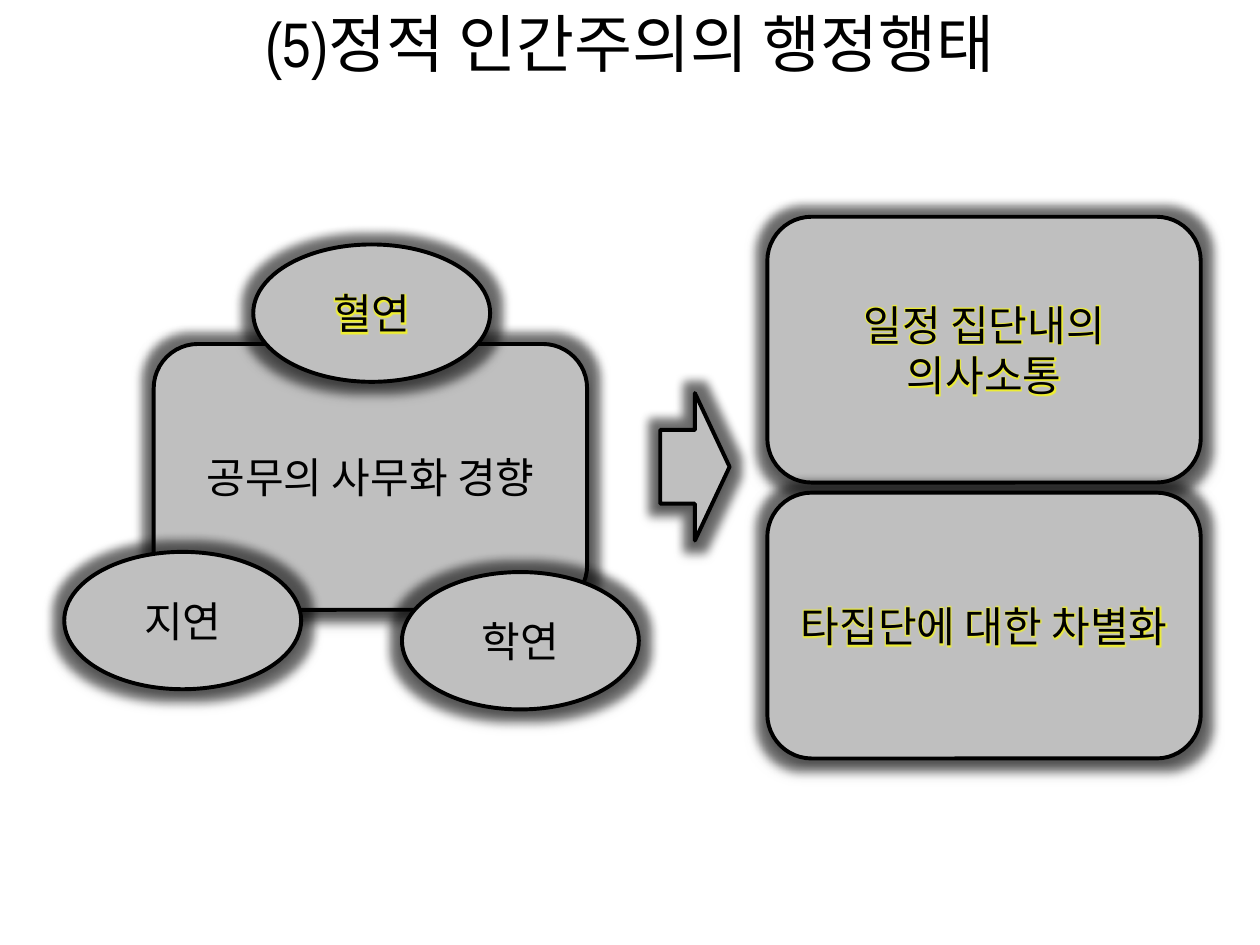
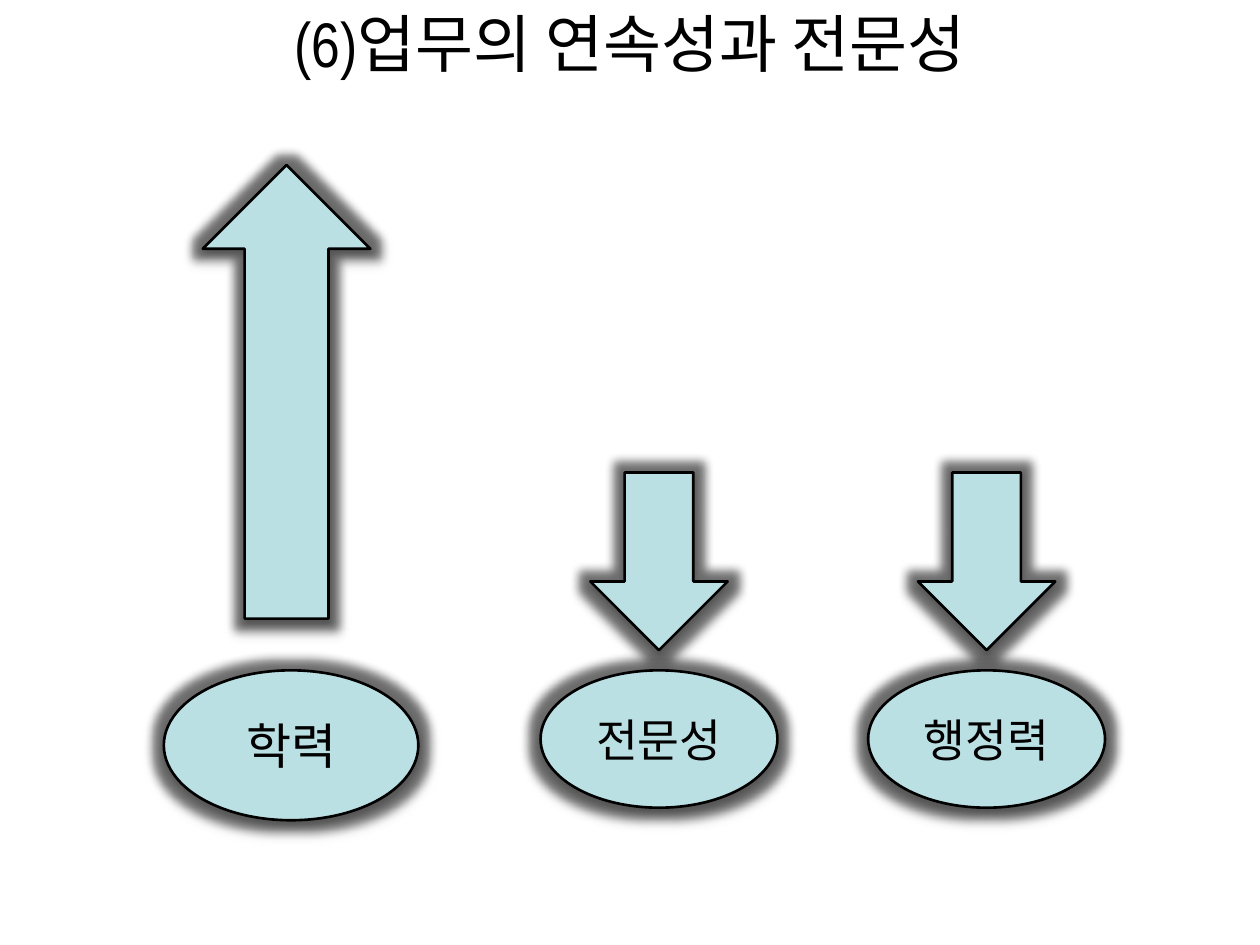
"""Two diagram slides on administrative behaviour and on expertise."""
from lxml.etree import SubElement
from pptx import Presentation
from pptx.dml.color import RGBColor
from pptx.enum.shapes import MSO_SHAPE
from pptx.enum.text import MSO_ANCHOR, PP_ALIGN
from pptx.oxml.ns import qn
from pptx.util import Inches, Pt

BLACK = RGBColor(0x00, 0x00, 0x00)
GREY = RGBColor(0xBF, 0xBF, 0xBF)
TEAL = RGBColor(0xBB, 0xE0, 0xE3)
YELLOW = RGBColor(0xFF, 0xFF, 0x00)
RED = RGBColor(0xFF, 0x00, 0x00)
TITLE_FONT, BODY_FONT = "Arial Narrow", "Noto Sans CJK KR"
WIDTH, HEIGHT, TITLE_HEIGHT = 10, 7.5, 0.67

BOX, OVAL = MSO_SHAPE.FLOWCHART_ALTERNATE_PROCESS, MSO_SHAPE.OVAL
BOX_SIZE, OVAL_SIZE = (3.44, 2.11), (1.88, 1.09)
TENDENCY = ("공무의 사무화 경향", 1.22, 2.73)
TIES = [("혈연", 2.01, 1.94, None, True), ("지연", 0.51, 4.38, YELLOW, False),
        ("학연", 3.19, 4.54, YELLOW, False)]
EFFECTS = ["일정 집단내의 의사소통", "타집단에 대한 차별화"]
EFFECT_LEFT, EFFECT_TOP, EFFECT_PITCH = 6.09, 1.72, 2.19

OVAL_TOP = 5.32
EDUCATION = ("학력", 1.3, (2.02, 1.19))
DECLINES = [("전문성", 4.29), ("행정력", 6.89)]
DOWN_SIZE, DOWN_TOP = (1.09, 1.41), 3.75


def add_color(parent, color, alpha):
    node = SubElement(parent, qn("a:srgbClr"), val=str(color))
    SubElement(node, qn("a:alpha"), val=str(alpha * 1000))


def add_glow(effects, color, radius, alpha):
    glow = SubElement(effects, qn("a:glow"), rad=str(Pt(radius)))
    add_color(glow, color, alpha)


def write(tf, text, size, font, outline=None, glow=False):
    tf.word_wrap = True
    tf.vertical_anchor = MSO_ANCHOR.MIDDLE
    tf.text = text
    p = tf.paragraphs[0]
    p.alignment = PP_ALIGN.CENTER
    r = p.runs[0]
    r.font.size = Pt(size)
    props = r.font._element
    if outline:
        ln = SubElement(props, qn("a:ln"), w=str(Pt(0.75)))
        add_color(SubElement(ln, qn("a:solidFill")), outline, 100)
    r.font.color.rgb = BLACK
    if glow:
        add_glow(SubElement(props, qn("a:effectLst")), YELLOW, 3, 75)
    r.font.name = font
    SubElement(props, qn("a:ea"), typeface=BODY_FONT)


def add_slide(prs, title):
    s = prs.slides.add_slide(prs.slide_layouts[6])
    sp = s.shapes.add_textbox(0, 0, Inches(WIDTH), Inches(TITLE_HEIGHT))
    write(sp.text_frame, title, 36, TITLE_FONT)
    return s


def add_part(s, kind, left, top, size, fill, line, text="", points=24,
             outline=None, glow=False):
    sp = s.shapes.add_shape(kind, *map(Inches, (left, top, *size)))
    sp.fill.solid()
    sp.fill.fore_color.rgb = fill
    sp.line.color.rgb = BLACK
    sp.line.width = Pt(line)
    sp.shadow.inherit = False
    effects = sp._element.spPr.find(qn("a:effectLst"))
    add_glow(effects, BLACK, 11, 50)
    shadow = SubElement(effects, qn("a:outerShdw"), blurRad=str(Pt(3.5)),
                        dist=str(Pt(2.2)), dir="5400000", rotWithShape="0")
    add_color(shadow, BLACK, 32)
    if text:
        write(sp.text_frame, text, points, BODY_FONT, outline, glow)


def build_behaviour(prs):
    s = add_slide(prs, "(5)정적 인간주의의 행정행태")
    text, left, top = TENDENCY
    add_part(s, BOX, left, top, BOX_SIZE, GREY, 2.25, text)
    for text, left, top, outline, glow in TIES:
        add_part(s, OVAL, left, top, OVAL_SIZE, GREY, 2.25, text,
                 outline=outline, glow=glow)
    add_part(s, MSO_SHAPE.RIGHT_ARROW, 5.24, 3.12, (0.55, 1.17), GREY, 2.25)
    for row, text in enumerate(EFFECTS):
        add_part(s, BOX, EFFECT_LEFT, EFFECT_TOP + row * EFFECT_PITCH, BOX_SIZE,
                 GREY, 2.25, text, outline=RED, glow=True)


def build_expertise(prs):
    s = add_slide(prs, "(6)업무의 연속성과 전문성")
    text, left, size = EDUCATION
    add_part(s, OVAL, left, OVAL_TOP, size, TEAL, 1.5, text, 28)
    add_part(s, MSO_SHAPE.UP_ARROW, 1.61, 1.31, (1.33, 3.6), TEAL, 1.5)
    for text, left in DECLINES:
        add_part(s, OVAL, left, OVAL_TOP, OVAL_SIZE, TEAL, 1.5, text, 26)
    for text, left in reversed(DECLINES):
        middle = left + (OVAL_SIZE[0] - DOWN_SIZE[0]) / 2
        add_part(s, MSO_SHAPE.DOWN_ARROW, middle, DOWN_TOP, DOWN_SIZE, TEAL, 1.5)


def main():
    prs = Presentation()
    prs.slide_width, prs.slide_height = Inches(WIDTH), Inches(HEIGHT)
    build_behaviour(prs)
    build_expertise(prs)
    prs.save("out.pptx")


if __name__ == "__main__":
    main()
